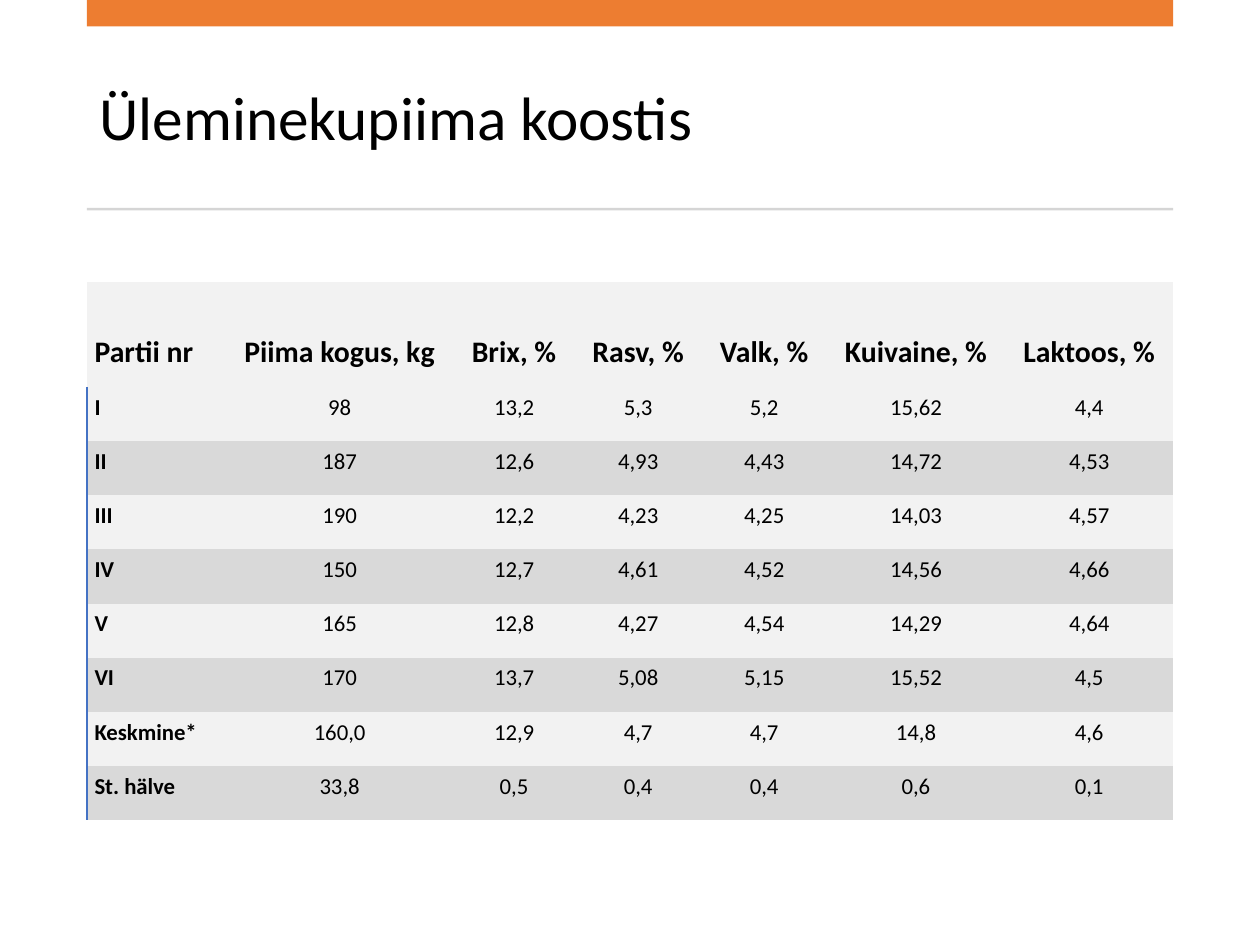
from lxml import etree
from pptx import Presentation
from pptx import util as u
from pptx.dml.color import RGBColor
from pptx.enum import shapes, text
from pptx.oxml import ns

LEFT, WIDTH = 0.69, 8.62
COLUMN_WIDTHS = [1.1, 1.81, 0.96, 1.01, 0.99, 1.42, 1.33]
HEADER_HEIGHT, ROW_HEIGHT = 0.83, 0.43
NO_GRID_STYLE = "{2D5ABB26-0587-4C30-8999-92F81FD0307C}"
MILK_ROWS = [
    ["Partii nr", "Piima kogus, kg", "Brix, %", "Rasv, %", "Valk, %", "Kuivaine, %", "Laktoos, %"],
    ["I", "98", "13,2", "5,3", "5,2", "15,62", "4,4"],
    ["II", "187", "12,6", "4,93", "4,43", "14,72", "4,53"],
    ["III", "190", "12,2", "4,23", "4,25", "14,03", "4,57"],
    ["IV", "150", "12,7", "4,61", "4,52", "14,56", "4,66"],
    ["V", "165", "12,8", "4,27", "4,54", "14,29", "4,64"],
    ["VI", "170", "13,7", "5,08", "5,15", "15,52", "4,5"],
    ["Keskmine*", "160,0", "12,9", "4,7", "4,7", "14,8", "4,6"],
    ["St. hälve", "33,8", "0,5", "0,4", "0,4", "0,6", "0,1"],
]


def color(value):
    return RGBColor.from_string(value)


class SlideBuilder:
    """Draws styled elements on the current slide."""

    font_name = "Calibri"
    text_color = "000000"
    accent = "ED7D31"
    rule_color = "D5D5D5"
    border_color = "4472C4"
    light_band, dark_band = "F2F2F2", "D9D9D9"

    def __init__(self, slide):
        self.slide = slide

    def format_text(self, paragraph, size, bold=False):
        for run in paragraph.runs:
            run.font.name = self.font_name
            run.font.size = u.Pt(size)
            run.font.bold = bold
            run.font.color.rgb = color(self.text_color)

    def title(self, words, top, height):
        box = self.slide.shapes.add_textbox(
            u.Inches(LEFT), u.Inches(top), u.Inches(WIDTH), u.Inches(height))
        frame = box.text_frame
        frame.word_wrap = True
        frame.vertical_anchor = text.MSO_ANCHOR.MIDDLE
        frame.text = words
        paragraph = frame.paragraphs[0]
        paragraph.line_spacing = 0.9
        self.format_text(paragraph, 35)

    def bar(self, top, height, fill):
        shape = self.slide.shapes.add_shape(
            shapes.MSO_SHAPE.RECTANGLE,
            u.Inches(LEFT), u.Inches(top), u.Inches(WIDTH), u.Inches(height))
        shape.shadow.inherit = False
        shape.fill.solid()
        shape.fill.fore_color.rgb = color(fill)
        shape.line.fill.background()

    def left_border(self, cell):
        properties = cell._tc.get_or_add_tcPr()
        line = etree.Element(ns.qn("a:lnL"), w=str(u.Pt(1)))
        fill = etree.SubElement(line, ns.qn("a:solidFill"))
        etree.SubElement(fill, ns.qn("a:srgbClr"), val=self.border_color)
        properties.insert(0, line)

    def cell(self, cell, words, row, column):
        is_header, is_label = row == 0, column == 0
        cell.margin_left = cell.margin_right = u.Inches(0.06)
        cell.margin_top, cell.margin_bottom = u.Inches(0.02), u.Inches(0.13)
        cell.vertical_anchor = text.MSO_ANCHOR.BOTTOM if is_header else text.MSO_ANCHOR.TOP
        cell.fill.solid()
        banded = row > 0 and row % 2 == 0
        cell.fill.fore_color.rgb = color(self.dark_band if banded else self.light_band)
        cell.text_frame.text = words
        paragraph = cell.text_frame.paragraphs[0]
        paragraph.alignment = text.PP_ALIGN.LEFT if is_label else text.PP_ALIGN.CENTER
        paragraph.line_spacing = 1.15
        paragraph.space_after = u.Pt(10)
        self.format_text(paragraph, 17 if is_header else 13, is_header or is_label)
        if is_label and not is_header:
            self.left_border(cell)

    def table(self, rows, top):
        heights = [HEADER_HEIGHT] + [ROW_HEIGHT] * (len(rows) - 1)
        table = self.slide.shapes.add_table(
            len(rows), len(COLUMN_WIDTHS), u.Inches(LEFT), u.Inches(top),
            u.Inches(WIDTH), u.Inches(sum(heights))).table
        table._tbl.tblPr.find(ns.qn("a:tableStyleId")).text = NO_GRID_STYLE
        table.horz_banding = False
        for column, width in zip(table.columns, COLUMN_WIDTHS):
            column.width = u.Inches(width)
        for row, (values, height) in enumerate(zip(rows, heights)):
            table.rows[row].height = u.Inches(height)
            for column, words in enumerate(values):
                self.cell(table.cell(row, column), words, row, column)


def main():
    presentation = Presentation()
    presentation.slide_width, presentation.slide_height = u.Inches(10), u.Inches(7.5)
    builder = SlideBuilder(presentation.slides.add_slide(presentation.slide_layouts[6]))
    builder.title("Üleminekupiima koostis", 0.37, 1.18)
    builder.bar(0, 0.21, builder.accent)
    builder.bar(1.65, 0.02, builder.rule_color)
    builder.table(MILK_ROWS, 2.24)
    presentation.save("out.pptx")


if __name__ == "__main__":
    main()
